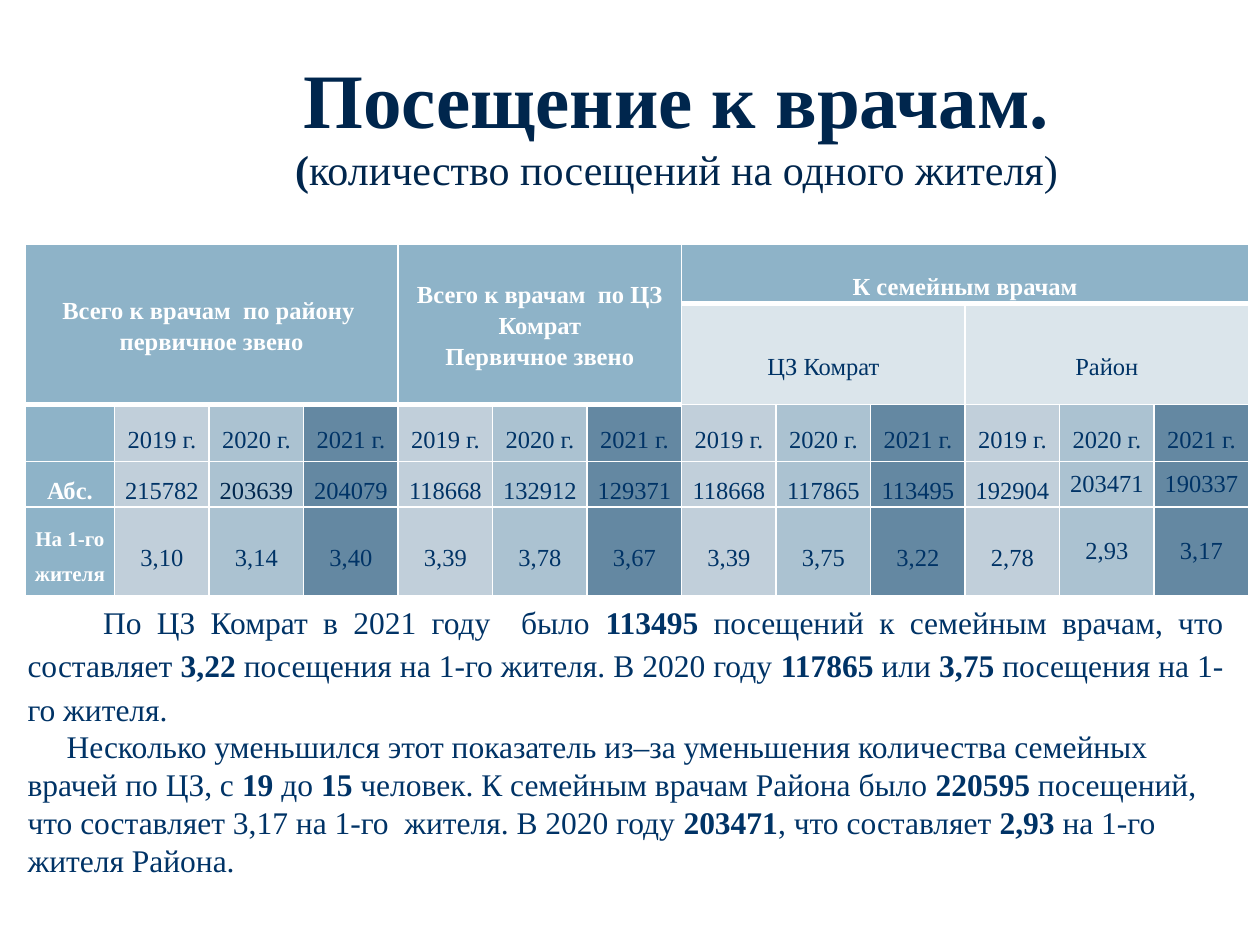
import lxml.etree
import pptx
import pptx.dml.color
import pptx.enum.text
import pptx.oxml.ns
import pptx.util
from pptx.util import Inches

FONT = "Times New Roman"
NAVY, DARK_NAVY, WHITE = "003366", "00264D", "FFFFFF"
HEADER, SUBHEADER = "8EB3C8", "DBE5EB"
YEAR_FILLS = ["C1CFDA", "ABC2D1", "6488A2"]
CENTER = pptx.enum.text.PP_ALIGN.CENTER
MIDDLE = pptx.enum.text.MSO_ANCHOR.MIDDLE

COLUMN_WIDTHS = [0.71] + [0.75] * 12
ROW_HEIGHTS = [0.42, 0.74, 0.45, 0.36, 0.71]
YEARS = ["2019 г.", "2020 г.", "2021 г."] * 4
VISITS = ["215782", "203639", "204079", "118668", "132912", "129371",
          "118668", "117865", "113495", "192904", "203471", "190337"]
PER_RESIDENT = ["3,10", "3,14", "3,40", "3,39", "3,78", "3,67",
                "3,39", "3,75", "3,22", "2,78", "2,93", "3,17"]

# Runs alternate between regular and bold.
KOMRAT_RUNS = ["По ЦЗ Комрат в 2021 году  было ", "113495",
               " посещений к семейным врачам, что составляет ", "3,22",
               " посещения на 1-го жителя. В 2020 году ", "117865", " или ", "3,75",
               " посещения на 1-го жителя."]
DISTRICT_RUNS = ["Несколько уменьшился этот показатель из–за уменьшения количества "
                 "семейных врачей по ЦЗ, с ", "19", " до ", "15",
                 " человек. К семейным врачам Района было ", "220595",
                 " посещений, что составляет 3,17 на 1-го  жителя. В 2020 году", " 203471",
                 ", что составляет ", "2,93", " на 1-го жителя Района."]


def rgb(value):
    return pptx.dml.color.RGBColor.from_string(value)


class SlideBuilder:
    def __init__(self, presentation):
        self.slide = presentation.slides.add_slide(presentation.slide_layouts[6])

    def style_font(self, font, size, color, bold=None):
        font.name = FONT
        font.size = pptx.util.Pt(size)
        font.color.rgb = rgb(color)
        font.bold = bold

    def text_box(self, left, top, width, height):
        box = self.slide.shapes.add_textbox(
            Inches(left), Inches(top), Inches(width), Inches(height))
        box.text_frame.word_wrap = True
        return box.text_frame

    def title(self, heading, bracket, subtitle):
        frame = self.text_box(1.33, 0.17, 8.08, 1.61)
        frame.vertical_anchor = MIDDLE
        paragraph = frame.paragraphs[0]
        paragraph.alignment = CENTER
        for text, size, bold in [(heading, 44, True), (bracket, 24, True), (subtitle, 24, False)]:
            if text == bracket:
                paragraph.add_line_break()
            run = paragraph.add_run()
            run.text = text
            self.style_font(run.font, size, DARK_NAVY, bold)

    def body_paragraph(self, paragraph, texts, indent):
        """Fill a paragraph whose every second run is bold."""
        paragraph._p.get_or_add_pPr().set("indent", str(Inches(indent)))
        self.style_font(paragraph.font, 18, NAVY)
        for index, text in enumerate(texts):
            run = paragraph.add_run()
            run.text = text
            self.style_font(run.font, 18, NAVY, index % 2 == 1)

    def table(self):
        shape = self.slide.shapes.add_table(
            len(ROW_HEIGHTS), len(COLUMN_WIDTHS), Inches(0.2), Inches(1.94),
            Inches(sum(COLUMN_WIDTHS)), Inches(sum(ROW_HEIGHTS)))
        for column, width in zip(shape.table.columns, COLUMN_WIDTHS):
            column.width = Inches(width)
        for row, height in zip(shape.table.rows, ROW_HEIGHTS):
            row.height = Inches(height)
        return shape.table

    def borders(self, cell, bottom):
        properties = cell._tc.get_or_add_tcPr()
        for side, width in [("L", 1), ("R", 1), ("T", 1), ("B", bottom)]:
            line = lxml.etree.SubElement(
                properties, pptx.oxml.ns.qn(f"a:ln{side}"), w=str(pptx.util.Pt(width)))
            fill = lxml.etree.SubElement(line, pptx.oxml.ns.qn("a:solidFill"))
            lxml.etree.SubElement(fill, pptx.oxml.ns.qn("a:srgbClr"), val=WHITE)

    def cell(self, cell, text, fill, color=NAVY, bold=False, size=14,
             spacing=1.5, margin=0.07, bottom=1):
        self.borders(cell, bottom)
        cell.fill.solid()
        cell.fill.fore_color.rgb = rgb(fill)
        cell.vertical_anchor = MIDDLE
        cell.margin_left = cell.margin_right = Inches(margin)
        cell.margin_top = cell.margin_bottom = 0
        cell.text = text
        for paragraph in cell.text_frame.paragraphs:
            paragraph.alignment = CENTER
            paragraph.line_spacing = spacing
            self.style_font(paragraph.font, size, color, bold)

    def merged_cell(self, table, row, column, row_span, column_span, text, **style):
        for covered_row in range(row, row + row_span):
            for covered_column in range(column, column + column_span):
                first = (covered_row, covered_column) == (row, column)
                self.cell(table.cell(covered_row, covered_column), text if first else "", **style)
        table.cell(row, column).merge(
            table.cell(row + row_span - 1, column + column_span - 1))


def main():
    presentation = pptx.Presentation()
    presentation.slide_width = Inches(10)
    presentation.slide_height = Inches(7.5)
    builder = SlideBuilder(presentation)
    builder.title("Посещение к врачам.", "(", "количество посещений на одного жителя)")

    table = builder.table()
    header = {"fill": HEADER, "color": WHITE, "bold": True}
    builder.merged_cell(table, 0, 0, 2, 4, "Всего к врачам  по району \nпервичное звено",
                        spacing=1.15, bottom=3, **header)
    builder.merged_cell(table, 0, 4, 2, 3, "Всего к врачам  по ЦЗ Комрат\nПервичное звено",
                        spacing=1.15, bottom=3, **header)
    builder.merged_cell(table, 0, 7, 1, 6, "К семейным врачам", spacing=2, bottom=3, **header)
    for column, text in [(7, "ЦЗ Комрат"), (10, "Район")]:
        builder.merged_cell(table, 1, column, 1, 3, text, fill=SUBHEADER, spacing=2)

    data_rows = [("", 14, YEARS, 0.07), ("Абс.", 14, VISITS, 0),
                 ("На 1-го жителя", 12, PER_RESIDENT, 0.07)]
    for row, (label, size, values, margin) in enumerate(data_rows, start=2):
        builder.cell(table.cell(row, 0), label, size=size, **header)
        for column, value in enumerate(values, start=1):
            single_spaced = row > 2 and column > 10
            builder.cell(table.cell(row, column), value, YEAR_FILLS[(column - 1) % 3],
                         margin=margin, spacing=1.0 if single_spaced else 1.5)
    table.cell(3, 2).text_frame.paragraphs[0].font.color.rgb = rgb(DARK_NAVY)

    body = builder.text_box(0.12, 4.69, 9.69, 2.36)
    komrat = body.paragraphs[0]
    komrat.alignment = pptx.enum.text.PP_ALIGN.JUSTIFY
    komrat.line_spacing = 1.15
    builder.body_paragraph(komrat, KOMRAT_RUNS, 0.6)
    builder.body_paragraph(body.add_paragraph(), DISTRICT_RUNS, 0.31)

    presentation.save("out.pptx")


if __name__ == "__main__":
    main()
